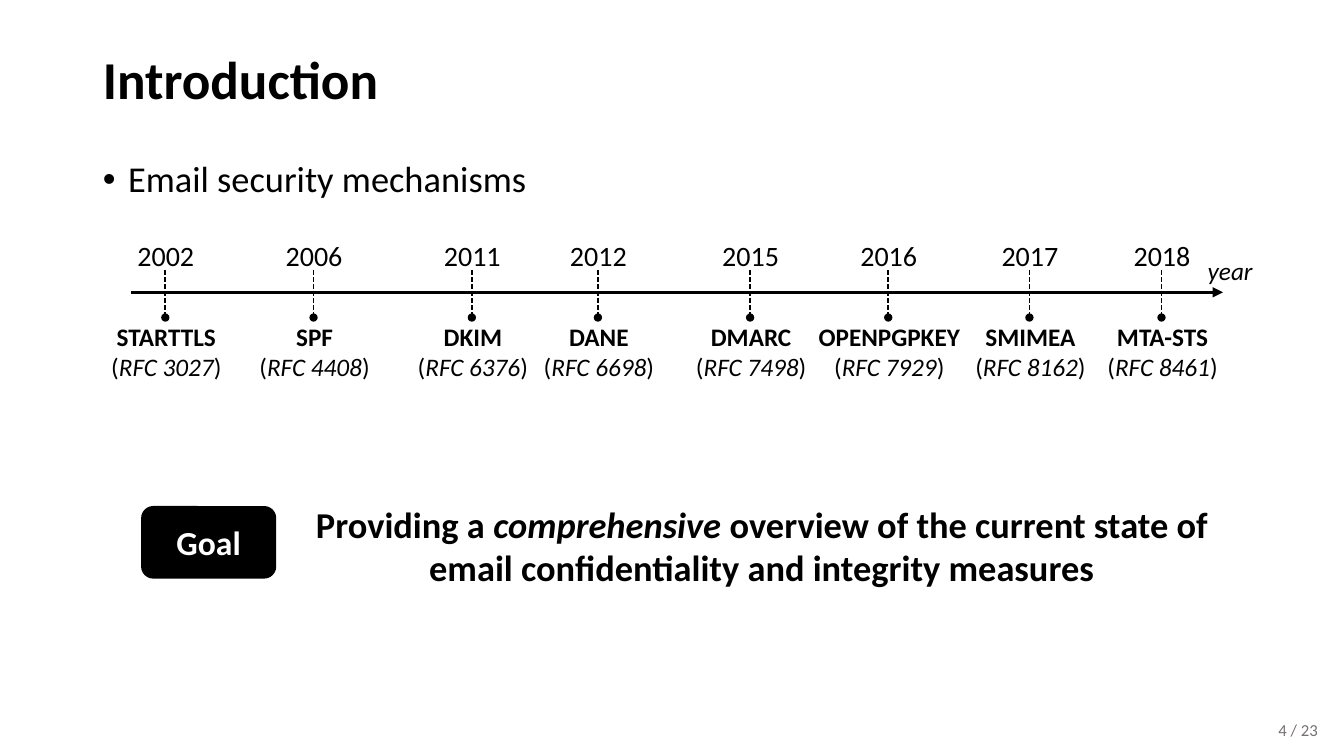
import pptx
import pptx.util
import pptx.dml.color
import pptx.enum.dml
import pptx.enum.shapes
import pptx.enum.text
from dataclasses import dataclass
from lxml import etree
from pptx.oxml.ns import qn

Inches, Pt = pptx.util.Inches, pptx.util.Pt
RGB = pptx.dml.color.RGBColor
Align = pptx.enum.text.PP_ALIGN
Anchor = pptx.enum.text.MSO_ANCHOR
Shape = pptx.enum.shapes.MSO_SHAPE


@dataclass(frozen=True)
class Theme:
    font: str = "Calibri"
    ink: RGB = RGB(0, 0, 0)
    paper: RGB = RGB(255, 255, 255)
    gray: RGB = RGB(0x76, 0x71, 0x71)
    title: int = 38
    body: int = 26
    goal: int = 24
    year: int = 20
    label: int = 18
    page: int = 12


theme = Theme()


def write(shape, *lines, size, color=theme.ink, align=Align.CENTER,
          anchor=Anchor.TOP, space=None):
    """Fill a shape; each line is a list of (text, style), style from "b" and "i"."""
    frame = shape.text_frame
    frame.word_wrap = True
    frame.auto_size = pptx.enum.text.MSO_AUTO_SIZE.NONE
    frame.vertical_anchor = anchor
    for n, line in enumerate(lines):
        para = frame.add_paragraph() if n else frame.paragraphs[0]
        para.alignment = align
        para.space_before = Pt(0)
        para.line_spacing = space
        for text, style in line:
            run = para.add_run()
            run.text = text
            font = run.font
            font.name, font.size = theme.font, Pt(size)
            font.bold, font.italic = "b" in style, "i" in style
            font.color.rgb = color


def draw_line(x1, y1, x2, y2, width, tail):
    """Draw a straight line with the given end mark and return it."""
    line = slide.shapes.add_connector(
        pptx.enum.shapes.MSO_CONNECTOR.STRAIGHT,
        Inches(x1), Inches(y1), Inches(x2), Inches(y2))
    line.line.color.rgb = theme.ink
    line.line.width = Pt(width)
    props = line._element.spPr
    etree.SubElement(props.find(qn("a:ln")), qn("a:tailEnd"), type=tail)
    etree.SubElement(props, qn("a:effectLst"))
    return line


deck = pptx.Presentation()
deck.slide_width, deck.slide_height = Inches(13.33), Inches(7.5)
slide = deck.slides.add_slide(deck.slide_layouts[1])

# Title and bullet
title, body = slide.placeholders
title.left, title.top = Inches(0.92), Inches(0.37)
title.width, title.height = Inches(11.5), Inches(0.89)
write(title, [("Introduction", "b")], size=theme.title, align=Align.LEFT,
      anchor=Anchor.MIDDLE, space=0.9)

body.left, body.top = Inches(0.92), Inches(1.55)
body.width, body.height = Inches(11.5), Inches(5.3)
write(body, [("Email security mechanisms", "")], size=theme.body,
      align=Align.LEFT, space=0.9)
indent = body.text_frame.paragraphs[0]._p.get_or_add_pPr()
indent.set("marL", str(Inches(0.25)))
indent.set("indent", str(-Inches(0.25)))
etree.SubElement(indent, qn("a:buFont"), typeface="Arial")
etree.SubElement(indent, qn("a:buChar"), char="•")

# Goal
aim = slide.shapes.add_textbox(Inches(2.73), Inches(4.93), Inches(9.66), Inches(0.98))
write(aim, [("Providing a ", "b"), ("comprehensive", "bi"),
            (" overview of the current state of email confidentiality "
             "and integrity measures", "b")], size=theme.body)

goal = slide.shapes.add_shape(Shape.ROUNDED_RECTANGLE, Inches(1.4), Inches(5.02),
                              Inches(1.34), Inches(0.72))
goal.shadow.inherit = False
goal.fill.solid()
goal.fill.fore_color.rgb = theme.ink
goal.line.fill.background()
write(goal, [("Goal", "b")], size=theme.goal, color=theme.paper, anchor=Anchor.MIDDLE)

# Timeline
draw_line(1.3, 2.9, 12.13, 2.9, 2.5, "triangle")
events = [
    (1.64, "2002", "STARTTLS", "RFC 3027"),
    (3.11, "2006", "SPF", "RFC 4408"),
    (4.68, "2011", "DKIM", "RFC 6376"),
    (5.93, "2012", "DANE", "RFC 6698"),
    (7.44, "2015", "DMARC", "RFC 7498"),
    (8.81, "2016", "OPENPGPKEY", "RFC 7929"),
    (10.21, "2017", "SMIMEA", "RFC 8162"),
    (11.52, "2018", "MTA-STS", "RFC 8461"),
]
for x, year, name, rfc in events:
    tick = draw_line(x, 2.68, x, 3.15, 1.25, "oval")
    tick.line.dash_style = pptx.enum.dml.MSO_LINE.SQUARE_DOT
    date = slide.shapes.add_textbox(Inches(x - 0.49), Inches(2.32),
                                    Inches(0.99), Inches(0.44))
    write(date, [(year, "")], size=theme.year)
    label = slide.shapes.add_textbox(Inches(x - 0.83), Inches(3.14),
                                     Inches(1.68), Inches(0.71))
    write(label, [(name, "b")], [("(", ""), (rfc, "i"), (")", "")], size=theme.label)

unit = slide.shapes.add_textbox(Inches(11.88), Inches(2.48), Inches(0.72), Inches(0.4))
write(unit, [("year", "i")], size=theme.label, align=Align.LEFT)

# Page number
page = slide.shapes.add_textbox(Inches(10.17), Inches(7.04), Inches(3), Inches(0.4))
write(page, [("4 / 23", "")], size=theme.page, color=theme.gray,
      align=Align.RIGHT, anchor=Anchor.MIDDLE)

deck.save("out.pptx")
